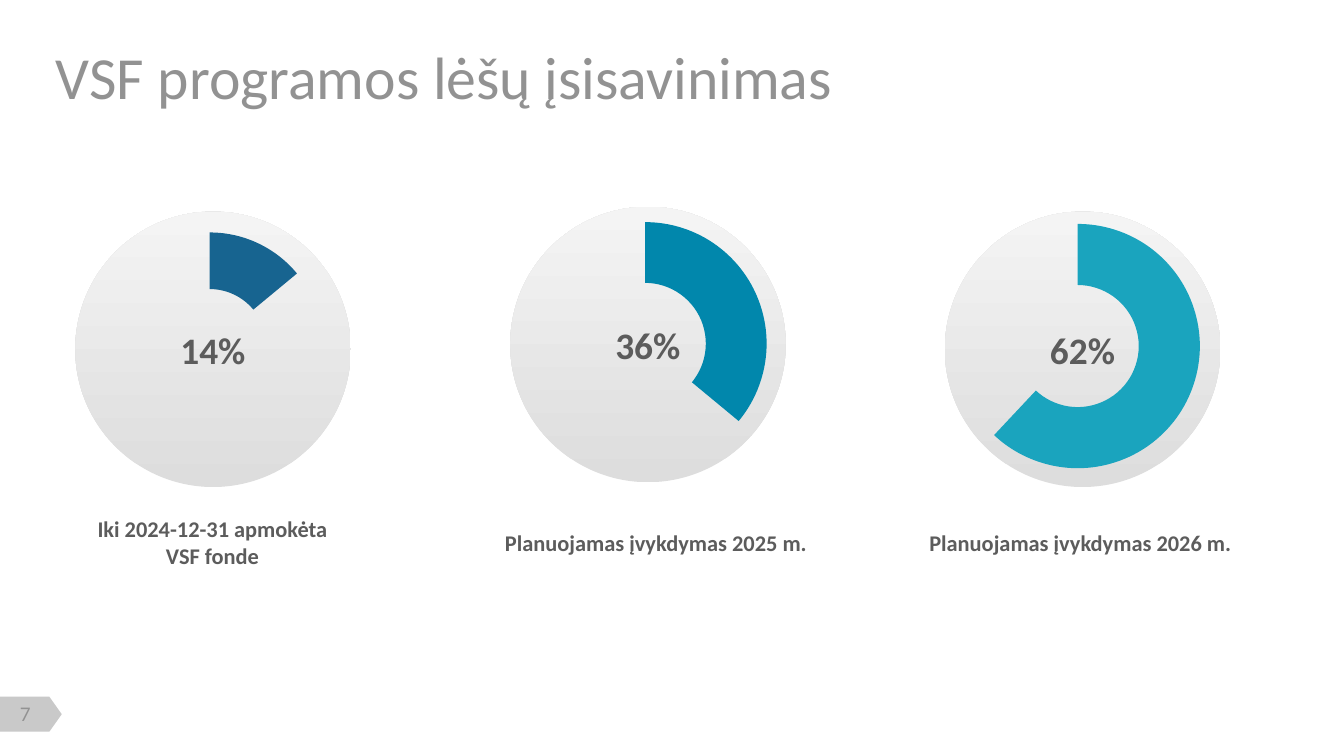
import pptx
import pptx.util
import pptx.chart.data
import pptx.dml.color
import pptx.enum.chart
import pptx.enum.shapes
import pptx.enum.text
import pptx.oxml
import pptx.oxml.ns

COLORS = {"text": "5C5C5C", "muted": "929292", "tab": "C9C9C9", "chart": "262626",
          "disc_bottom": "DDDDDD", "disc_top": "F4F4F4",
          "paid": "176490", "plan_2025": "0187AC", "plan_2026": "1AA4BE"}
RGB = {part: pptx.dml.color.RGBColor.from_string(value) for part, value in COLORS.items()}
ALIGN = pptx.enum.text.PP_ALIGN
ANCHOR = pptx.enum.text.MSO_ANCHOR
SHAPE = pptx.enum.shapes.MSO_SHAPE

deck = pptx.Presentation()
deck.slide_width = pptx.util.Inches(10)
deck.slide_height = deck.slide_width * 9 // 16
column = deck.slide_width / 100
row = deck.slide_height / 56.25
slide = deck.slides.add_slide(deck.slide_layouts[5])


def cells(left, top, width, height):
    return [round(n * unit) for n, unit in zip((left, top, width, height), (column, row) * 2)]


def write(frame, text, size, color, bold=False, face="Calibri", align=ALIGN.CENTER,
          anchor=ANCHOR.MIDDLE, margins=(0, 0, 0, 0)):
    frame.text = text
    layout = {"word_wrap": True, "auto_size": pptx.enum.text.MSO_AUTO_SIZE.NONE,
              "vertical_anchor": anchor}
    for side, margin in zip(("left", "top", "right", "bottom"), margins):
        layout["margin_" + side] = pptx.util.Inches(margin)
    for name, value in layout.items():
        setattr(frame, name, value)
    paragraph = frame.paragraphs[0]
    paragraph.alignment = align
    for name, value in {"size": pptx.util.Pt(size), "bold": bold, "name": face}.items():
        setattr(paragraph.font, name, value)
    paragraph.font.color.rgb = RGB[color]


page_tab = slide.shapes.add_shape(SHAPE.FLOWCHART_OFFPAGE_CONNECTOR, *cells(1, 50.84, 2.6, 4.6))
page_tab.rotation = 270
page_tab.shadow.inherit = False
page_tab.fill.solid()
page_tab.fill.fore_color.rgb = RGB["tab"]
page_tab.line.fill.background()
page_number = slide.shapes.add_textbox(*cells(0.24, 52.3, 3.3, 1.7))
write(page_number.text_frame, "7", 10, "muted", face="Lato")

heading = slide.shapes.title
heading.left, heading.top, heading.width, heading.height = cells(4.16, 3.7, 91.5, 3.9)
write(heading.text_frame, "VSF programos lėšų įsisavinimas", 32, "muted",
      align=ALIGN.LEFT, margins=(0, 0.05, 0.1, 0.05))

stages = [
    (14, "paid", (5.6, 15.74), (5.56, 14, 20.5, 22.9), (0.075, 0.144, 0.831, 0.736),
     "Iki 2024-12-31 apmokėta VSF fonde", (6.32, 38.34, 19, 4)),
    (36, "plan_2025", (37.96, 15.38), (37.44, 14, 21.4, 22.9), (0.071, 0.11, 0.845, 0.791),
     "Planuojamas įvykdymas 2025 m.", (37.12, 39.4, 23.4, 2)),
    (62, "plan_2026", (70.3, 15.74), (68.52, 14.24, 22.6, 22.9), (0.114, 0.106, 0.805, 0.794),
     "Planuojamas įvykdymas 2026 m.", (69.1, 39.4, 22.6, 2)),
]
for share, color, disc_corner, ring_box, plot_box, caption, caption_box in stages:
    disc = slide.shapes.add_shape(SHAPE.OVAL, *cells(*disc_corner, 20.5, 20.5))
    disc.shadow.inherit = False
    disc.line.fill.background()
    disc.fill.gradient()
    disc.fill.gradient_angle = 90
    for stop, shade, position in zip(disc.fill.gradient_stops, ("disc_bottom", "disc_top"), (0, 1)):
        stop.color.rgb = RGB[shade]
        stop.position = position
    write(disc.text_frame, f"{share}%", 20, "text", bold=True)

    progress = pptx.chart.data.CategoryChartData()
    progress.categories = ["1", "2"]
    progress.add_series("Series 1", (share, 100 - share))
    ring = slide.shapes.add_chart(pptx.enum.chart.XL_CHART_TYPE.DOUGHNUT,
                                  *cells(*ring_box), progress).chart
    ring.has_legend = False
    ring.has_title = False
    ring.font.size = pptx.util.Pt(18)
    ring.font.name = "Calibri"
    ring.font.color.rgb = RGB["chart"]
    plot = ring.plots[0]
    plot.vary_by_categories = True
    done, remaining = (plot.series[0].points[i].format for i in range(2))
    done.fill.solid()
    done.fill.fore_color.rgb = RGB[color]
    remaining.fill.background()
    for part in (done, remaining):
        part.line.fill.background()

    qn = pptx.oxml.ns.qn
    plot._element.find(qn("c:holeSize")).set("val", "64")
    plot_area = plot._element.getparent()
    for automatic in plot_area.findall(qn("c:layout")):
        plot_area.remove(automatic)
    settings = [("layoutTarget", "inner"), ("xMode", "edge"), ("yMode", "edge"),
                *zip("xywh", plot_box)]
    manual = "".join(f'<c:{tag} val="{value}"/>' for tag, value in settings)
    plot_area.insert(0, pptx.oxml.parse_xml(
        f'<c:layout {pptx.oxml.ns.nsdecls("c")}><c:manualLayout>{manual}</c:manualLayout></c:layout>'))

    label = slide.shapes.add_textbox(*cells(*caption_box))
    write(label.text_frame, caption, 12, "text", bold=True, anchor=ANCHOR.TOP)

deck.save("out.pptx")
